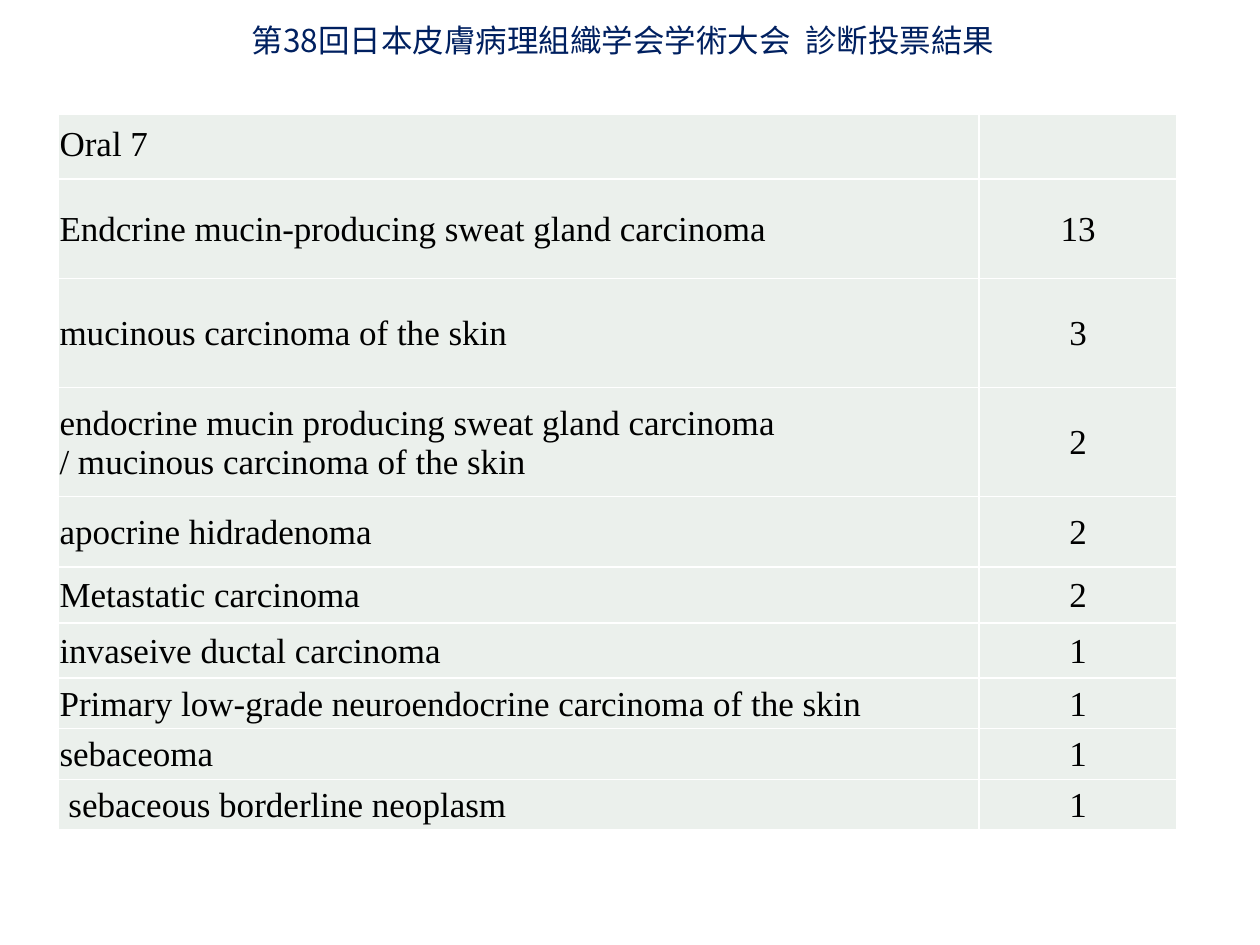
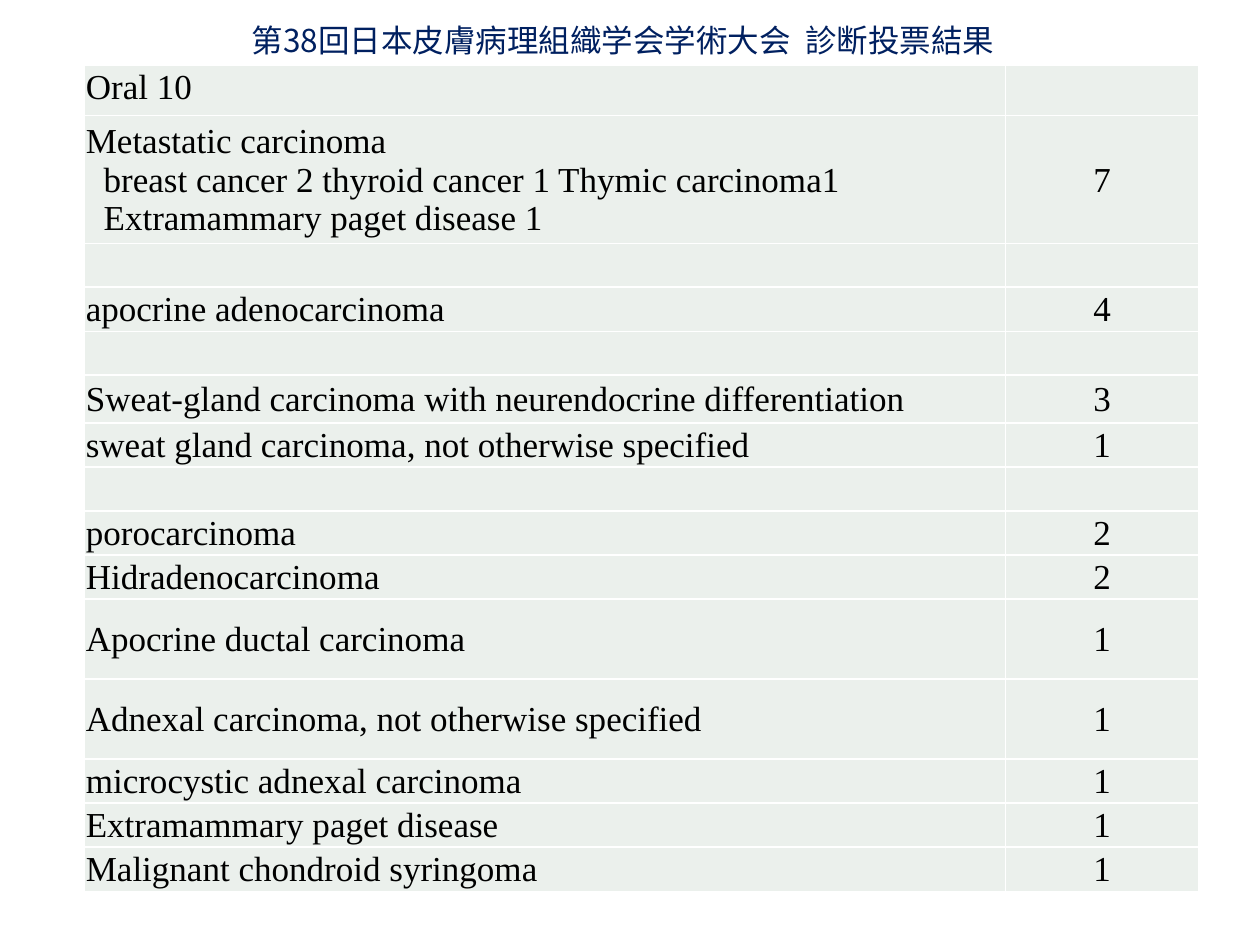
from lxml import etree
from pptx import Presentation
from pptx.dml.color import RGBColor
from pptx.enum.text import MSO_ANCHOR, MSO_AUTO_SIZE, PP_ALIGN
from pptx.oxml.ns import qn
from pptx.util import Cm, Pt

NAVY = RGBColor(0x00, 0x20, 0x60)
BLACK = RGBColor(0x00, 0x00, 0x00)
WHITE = RGBColor(0xFF, 0xFF, 0xFF)
PALE_GREEN = RGBColor(0xEB, 0xF0, 0xEC)

TITLE = "第38回日本皮膚病理組織学会学術大会  診断投票結果"
TITLE_WIDTH = 16.8  # holds the title on one line, clear of the table
TITLE_FONT = {"name": "Noto Sans CJK JP", "size": Pt(18)}
CELL_FONT = {"name": "Times New Roman", "size": Pt(20)}
CELL_FORMAT = {
    "vertical_anchor": MSO_ANCHOR.MIDDLE,
    "margin_left": Cm(0.03),
    "margin_right": Cm(0.03),
    "margin_top": Cm(0.03),
    "margin_bottom": Cm(0),
}
DIAGNOSIS_WIDTH = 18.57
SPACE = 0.18  # width of one space in the cell font, in cm

# Each row: height in cm, lines as (text, indent in spaces), votes
ORAL_7 = [
    (1.3, [("Oral 7", 0)], ""),
    (2.0, [("Endcrine mucin-producing sweat gland carcinoma", 0)], "13"),
    (2.2, [("mucinous carcinoma of the skin", 0)], "3"),
    (2.2, [("endocrine mucin producing sweat gland carcinoma", 0),
           ("/ mucinous carcinoma of the skin", 0)], "2"),
    (1.42, [("apocrine hidradenoma", 0)], "2"),
    (1.13, [("Metastatic carcinoma", 0)], "2"),
    (1.11, [("invaseive ductal carcinoma", 0)], "1"),
    (1.02, [("Primary low-grade neuroendocrine carcinoma of the skin", 0)], "1"),
    (1.02, [("sebaceoma", 0)], "1"),
    (1.02, [("sebaceous borderline neoplasm", 1)], "1"),
]
GAP = (0.88, [], "")
ORAL_10 = [
    (0.99, [("Oral 10", 0)], ""),
    (2.58, [("Metastatic carcinoma", 0),
            ("breast cancer 2 thyroid cancer 1 Thymic carcinoma1", 2),
            ("Extramammary paget disease 1", 2)], "7"),
    GAP,
    (0.89, [("apocrine adenocarcinoma", 0)], "4"),
    GAP,
    (0.97, [("Sweat-gland carcinoma with neurendocrine differentiation", 0)], "3"),
    (0.89, [("sweat gland carcinoma, not otherwise specified", 0)], "1"),
    GAP,
    (0.89, [("porocarcinoma", 0)], "2"),
    (0.89, [("Hidradenocarcinoma", 0)], "2"),
    (1.61, [("Apocrine ductal carcinoma", 0)], "1"),
    (1.61, [("Adnexal carcinoma, not otherwise specified", 0)], "1"),
    (0.89, [("microcystic adnexal carcinoma", 0)], "1"),
    (0.89, [("Extramammary paget disease", 0)], "1"),
    (0.89, [("Malignant chondroid syringoma", 0)], "1"),
]

# Each slide: table left, table top, width of the votes column, rows
SLIDES = [(1.17, 2.31, 3.99, ORAL_7), (1.7, 1.32, 3.89, ORAL_10)]


def add_run(p, text, font, color):
    r = p.add_run()
    r.text = text
    for name, value in font.items():
        setattr(r.font, name, value)
    r.font.color.rgb = color
    ea = etree.SubElement(r.font._element, qn("a:ea"))
    ea.set("typeface", font["name"])


def format_cell(cell):
    for name, value in CELL_FORMAT.items():
        setattr(cell, name, value)
    tcPr = cell._tc.get_or_add_tcPr()
    for side in ("lnL", "lnR", "lnT", "lnB"):
        ln = etree.SubElement(tcPr, qn(f"a:{side}"), w=str(Pt(1)))
        fill = etree.SubElement(ln, qn("a:solidFill"))
        etree.SubElement(fill, qn("a:srgbClr"), val=str(WHITE))
    cell.fill.solid()
    cell.fill.fore_color.rgb = PALE_GREEN


prs = Presentation()
prs.slide_width, prs.slide_height = Cm(25.4), Cm(19.05)

for left, top, votes_width, rows in SLIDES:
    s = prs.slides.add_slide(prs.slide_layouts[6])

    # Title
    sp = s.shapes.add_textbox(Cm(4.83), Cm(0.3), Cm(TITLE_WIDTH), Cm(1.02))
    tf = sp.text_frame
    tf.word_wrap = True
    tf.auto_size = MSO_AUTO_SIZE.SHAPE_TO_FIT_TEXT
    add_run(tf.paragraphs[0], TITLE, TITLE_FONT, NAVY)

    # Table of diagnoses and votes
    height = sum(row[0] for row in rows)
    table = s.shapes.add_table(len(rows), 2, Cm(left), Cm(top),
                               Cm(DIAGNOSIS_WIDTH + votes_width), Cm(height)).table
    table.first_row = table.horz_banding = False
    table.columns[0].width = Cm(DIAGNOSIS_WIDTH)
    table.columns[1].width = Cm(votes_width)

    for i, (row_height, lines, votes) in enumerate(rows):
        table.rows[i].height = Cm(row_height)
        diagnosis_cell, votes_cell = table.cell(i, 0), table.cell(i, 1)
        format_cell(diagnosis_cell)
        format_cell(votes_cell)
        if i == 0:
            diagnosis_cell.margin_bottom = Cm(0.13)

        tf = diagnosis_cell.text_frame
        for n, (text, indent) in enumerate(lines):
            p = tf.add_paragraph() if n else tf.paragraphs[0]
            if indent:
                p._p.get_or_add_pPr().set("marL", str(Cm(indent * SPACE)))
            add_run(p, text, CELL_FONT, BLACK)

        if votes:
            p = votes_cell.text_frame.paragraphs[0]
            p.alignment = PP_ALIGN.CENTER
            add_run(p, votes, CELL_FONT, BLACK)

prs.save("out.pptx")
